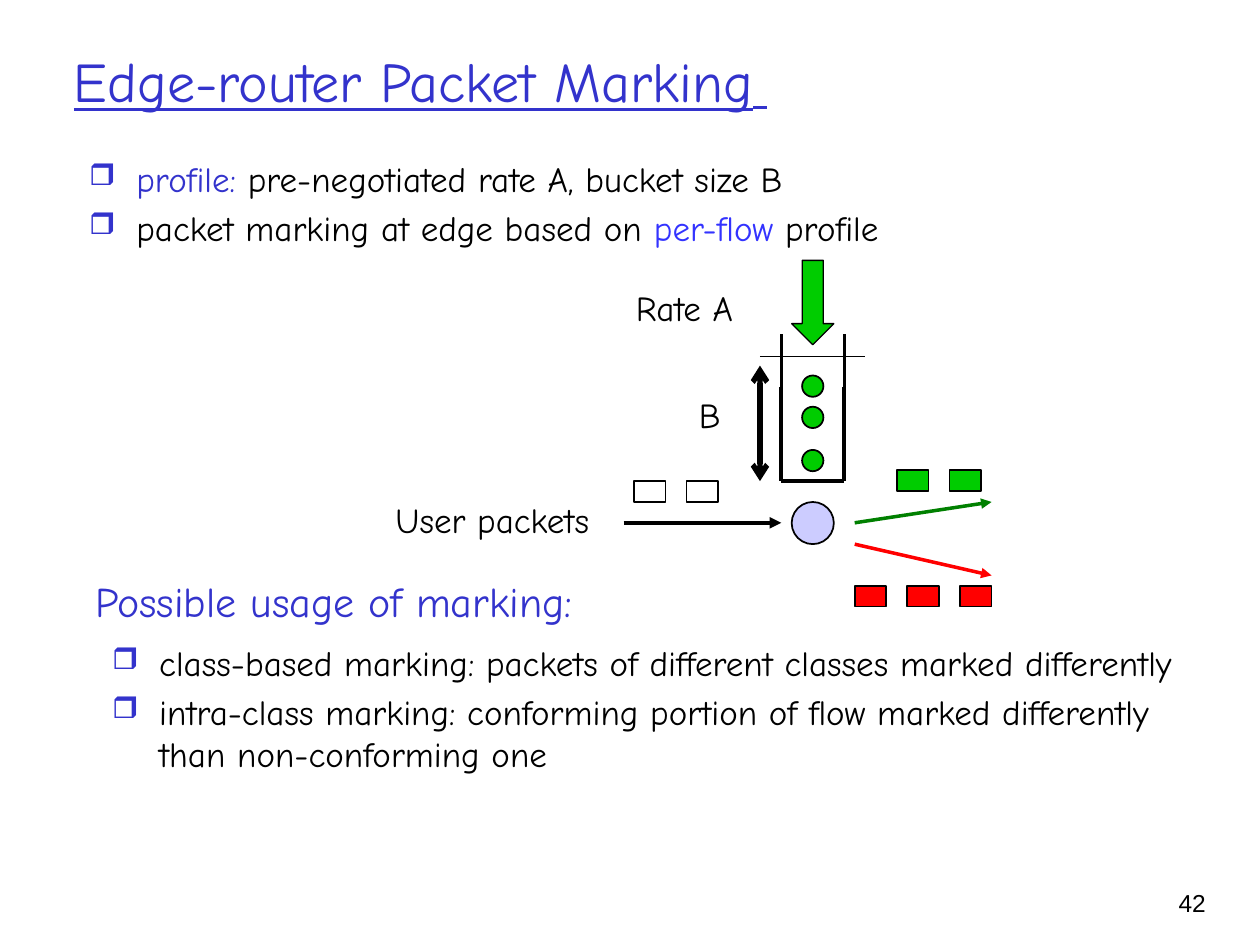
from dataclasses import dataclass

from lxml import etree
from pptx import Presentation
from pptx.dml.color import RGBColor as RGB
from pptx.enum.shapes import MSO_CONNECTOR as CONN, MSO_SHAPE as SHAPE
from pptx.enum.text import MSO_ANCHOR as ANCHOR, PP_ALIGN as ALIGN
from pptx.oxml.ns import qn
from pptx.util import Cm, Pt


@dataclass(frozen=True)
class Theme:
    font: str = "Comic Neue"
    number_font: str = "Arial"
    black: str = "000000"
    white: str = "FFFFFF"
    accent: str = "3333CC"
    flow: str = "3333FF"
    green: str = "00CC00"
    dark_green: str = "008000"
    red: str = "FF0000"
    lilac: str = "CCCCFF"
    title: int = 32
    heading: int = 24
    body: int = 20
    number: int = 14


T = Theme()


def add_run(p, text, size=T.body, color=T.black, **formats):
    r = p.add_run()
    r.text = text
    values = {"name": T.font, "size": Pt(size), **formats}
    for key, value in values.items():
        setattr(r.font, key, value)
    r.font.color.rgb = RGB.from_string(color)


def add_text(s, box, *paragraphs, wrap=True, anchor=ANCHOR.TOP):
    tf = s.shapes.add_textbox(*map(Cm, box)).text_frame
    tf.word_wrap = wrap
    tf.vertical_anchor = anchor
    for i, runs in enumerate(paragraphs):
        p = tf.add_paragraph() if i else tf.paragraphs[0]
        for text, formats in runs:
            add_run(p, text, **formats)
    return tf


def add_bullets(s, box, *paragraphs):
    tf = add_text(s, box, *paragraphs)
    for i, p in enumerate(tf.paragraphs):
        if i:
            p.space_before = Pt(4)
        pPr = p._p.get_or_add_pPr()
        pPr.set("marL", str(Cm(0.95)))
        pPr.set("indent", str(-Cm(0.95)))
        color = etree.SubElement(pPr, qn("a:buClr"))
        etree.SubElement(color, qn("a:srgbClr"), val=T.accent)
        etree.SubElement(pPr, qn("a:buSzPct"), val="85000")
        etree.SubElement(pPr, qn("a:buChar"), char="❒")


def add_block(s, kind, box, fill, width=1):
    sp = s.shapes.add_shape(kind, *map(Cm, box))
    sp.shadow.inherit = False
    sp.fill.solid()
    sp.fill.fore_color.rgb = RGB.from_string(fill)
    sp.line.color.rgb = RGB.from_string(T.black)
    sp.line.width = Pt(width)


def add_packets(s, left, top, count, fill):
    for i in range(count):
        add_block(s, SHAPE.RECTANGLE, (left + 1.06 * i, top, 0.64, 0.42), fill)


def add_line(s, start, end, width, color=T.black, **ends):
    cx = s.shapes.add_connector(CONN.STRAIGHT, *map(Cm, start + end))
    cx.line.width = Pt(width)
    cx.line.color.rgb = RGB.from_string(color)
    ln = cx.line._get_or_add_ln()
    for end_name, kind in ends.items():
        etree.SubElement(ln, qn(f"a:{end_name}"), type=kind)
    etree.SubElement(cx._element.spPr, qn("a:effectLst"))


def draw_bucket(s):
    left, right, rim, joint, base = 15.75, 17.02, 6.73, 7.8, 9.7
    for x in (left, right):
        add_line(s, (x, joint), (x, base), 2.25)
        add_line(s, (x, joint), (x, rim), 2)
    add_line(s, (left, base), (right, base), 2.25)
    for top in (7.57, 8.2, 9.07):
        add_block(s, SHAPE.OVAL, (16.17, top, 0.43, 0.43), T.green)
    add_block(s, SHAPE.DOWN_ARROW, (15.96, 5.25, 0.85, 1.7), T.green, 0.75)
    add_line(s, (15.32, 7.19), (17.44, 7.19), 0.75)
    add_line(s, (15.32, 7.37), (15.32, base), 3, headEnd="arrow", tailEnd="arrow")
    add_text(s, (12.57, 5.66, 3.18, 1.09), [("Rate A", {})])
    add_text(s, (13.84, 7.8, 0.97, 1.09), [("B", {})], wrap=False)


def draw_flows(s):
    add_text(s, (7.72, 9.93, 5.92, 1.09), [("User packets", {})])
    add_block(s, SHAPE.OVAL, (15.96, 10.12, 0.85, 0.85), T.lilac)
    add_packets(s, 12.78, 9.7, 2, T.white)
    add_packets(s, 18.08, 9.48, 2, T.green)
    add_packets(s, 17.23, 11.81, 3, T.red)
    for start, end, width, color in (
        ((12.57, 10.54), (15.75, 10.54), 2.25, T.black),
        ((17.23, 10.54), (19.99, 10.12), 2, T.dark_green),
        ((17.23, 10.97), (19.99, 11.6), 2, T.red),
    ):
        add_line(s, start, end, width, color, tailEnd="triangle")


def main():
    prs = Presentation()
    prs.slide_width, prs.slide_height = Cm(25.4), Cm(19.05)
    s = prs.slides.add_slide(prs.slide_layouts[6])
    accent = {"color": T.accent}

    number = add_text(s, (22.68, 17.78, 1.88, 1.27),
                      [("42", {"size": T.number, "name": T.number_font})])
    number.paragraphs[0].alignment = ALIGN.RIGHT
    underlined = {**accent, "underline": True}
    add_text(s, (1.24, 0.66, 21.59, 1.9),
             [("Edge-router Packet Marking", {**underlined, "size": T.title}),
              (" ", {**underlined, "size": T.heading})],
             anchor=ANCHOR.MIDDLE)
    add_bullets(s, (1.55, 3.05, 22.23, 2.54),
                [("profile: ", accent),
                 ("pre-negotiated rate A, bucket size B", {})],
                [("packet marking at edge based on ", {}),
                 ("per-flow", {"color": T.flow}), (" profile", {})])
    add_text(s, (1.68, 11.48, 12.5, 1.27),
             [("Possible usage of marking:", {**accent, "size": T.heading})])
    add_bullets(s, (2.01, 12.8, 22.86, 5.08),
                [("class-based marking: packets of different classes "
                  "marked differently", {})],
                [("intra-class marking: conforming portion of flow marked "
                  "differently than non-conforming one", {})])
    draw_bucket(s)
    draw_flows(s)
    prs.save("out.pptx")


if __name__ == "__main__":
    main()
